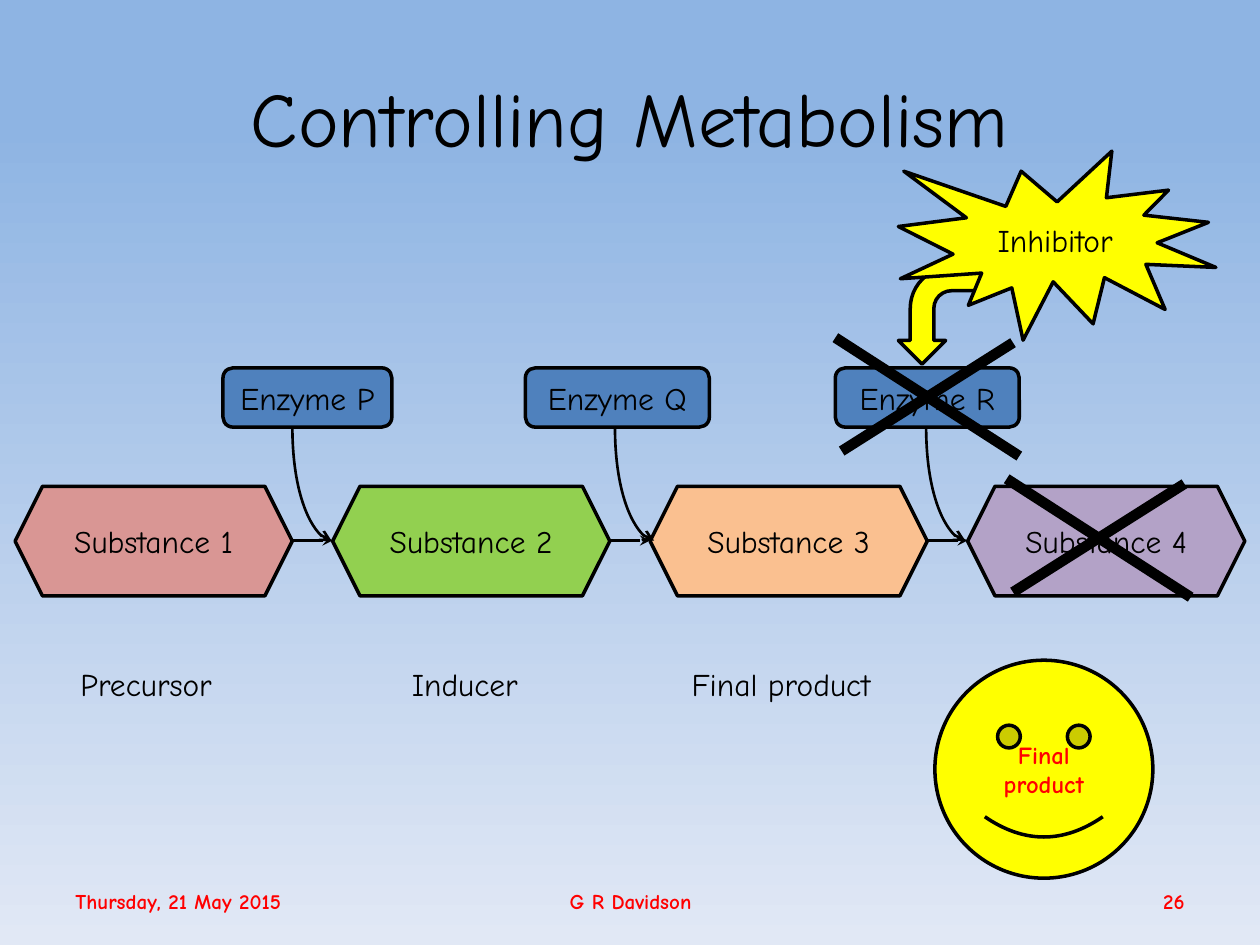
import pptx
import pptx.util
import pptx.dml.color
import pptx.enum.shapes
import pptx.enum.text
import pptx.oxml.ns
from lxml import etree

Inches = pptx.util.Inches
RGB = pptx.dml.color.RGBColor
SHAPE = pptx.enum.shapes.MSO_SHAPE
LINK = pptx.enum.shapes.MSO_CONNECTOR
ALIGN = pptx.enum.text.PP_ALIGN
ANCHOR = pptx.enum.text.MSO_ANCHOR
qn = pptx.oxml.ns.qn

FONT = "Comic Neue"
BLACK = RGB(0x00, 0x00, 0x00)
RED = RGB(0xFF, 0x00, 0x00)
YELLOW = RGB(0xFF, 0xFF, 0x00)
ENZYME_BLUE = RGB(0x4F, 0x81, 0xBD)
SKY_STOPS = [(0.13, RGB(0x8E, 0xB4, 0xE3)), (1, RGB(0xE1, 0xE8, 0xF5))]

# Content
TITLE = "Controlling Metabolism"
FOOTERS = [  # text, left, width, alignment
    ("Thursday, 21 May 2015", 0.5, 3.32, ALIGN.LEFT),
    ("G R Davidson", 3.42, 3.17, ALIGN.CENTER),
    ("26", 7.17, 2.33, ALIGN.RIGHT),
]
SUBSTANCES = [
    ("Substance 1", RGB(0xD9, 0x96, 0x94)),
    ("Substance 2", RGB(0x92, 0xD0, 0x50)),
    ("Substance 3", RGB(0xFA, 0xC0, 0x90)),
    ("Substance 4", RGB(0xB3, 0xA2, 0xC7)),
]
ENZYMES = [  # text, left, width, start of its curved arrow
    ("Enzyme P", 1.77, 1.34, 2.32),
    ("Enzyme Q", 4.17, 1.46, 4.88),
    ("Enzyme R", 6.63, 1.46, 7.35),
]
ROLES = [("Precursor", 0.54, 1.35), ("Inducer", 3.17, 1.14), ("Final product", 5.39, 1.75)]
CROSSES = [(6.63, 2.68), (7.99, 3.8)]

# Layout of the pathway
FIRST_LEFT, PITCH = 0.12, 2.52
HEX_W, HEX_H, HEX_TOP = 2.2, 0.87, 3.86
HEX_MID = 4.29
ENZYME_TOP, ENZYME_H = 2.92, 0.47
ENZYME_BASE = ENZYME_TOP + ENZYME_H
CURVE_W = 0.31

deck = pptx.Presentation()
deck.slide_width, deck.slide_height = Inches(10), Inches(7.5)
page = deck.slides.add_slide(deck.slide_layouts[6])


def write(box, text, size=18, color=BLACK, bold=False, align=ALIGN.CENTER, anchor=ANCHOR.MIDDLE, wrap=True):
    frame = box.text_frame
    frame.word_wrap = wrap
    frame.vertical_anchor = anchor
    para = frame.paragraphs[0]
    para.alignment = align
    span = para.add_run()
    span.text = text
    span.font.name = FONT
    span.font.size = pptx.util.Pt(size)
    span.font.bold = bold
    span.font.color.rgb = color


def add_label(text, left, top, width, height, **style):
    box = page.shapes.add_textbox(*map(Inches, (left, top, width, height)))
    write(box, text, **style)


def add_figure(kind, left, top, width, height, fill, text="", **style):
    figure = page.shapes.add_shape(kind, *map(Inches, (left, top, width, height)))
    figure.shadow.inherit = False
    figure.fill.solid()
    figure.fill.fore_color.rgb = fill
    figure.line.color.rgb = BLACK
    figure.line.width = pptx.util.Pt(2)
    if text:
        write(figure, text, **style)
    return figure


def add_line(x1, y1, x2, y2, width=1.5, head=None, kind=LINK.STRAIGHT):
    link = page.shapes.add_connector(kind, *map(Inches, (x1, y1, x2, y2)))
    link.line.color.rgb = BLACK
    link.line.width = pptx.util.Pt(width)
    props = link.element.spPr
    if head:
        etree.SubElement(props.find(qn("a:ln")), qn("a:tailEnd"), type=head)
    etree.SubElement(props, qn("a:effectLst"))
    return link


def add_curve(x, y1, y2):
    """Curve that leaves downwards and arrives from the left: a quarter-turned, flipped bend."""
    length = y2 - y1
    mid_x, mid_y = x + CURVE_W / 2, (y1 + y2) / 2
    curve = add_line(mid_x + length / 2, mid_y - CURVE_W / 2,
                     mid_x - length / 2, mid_y + CURVE_W / 2, head="arrow", kind=LINK.CURVE)
    props = curve.element.spPr
    props.find(qn("a:xfrm")).set("rot", str(270 * 60000))
    props.find(qn("a:prstGeom")).set("prst", "curvedConnector2")


# Background
sky = page.background.fill
sky.gradient()
sky.gradient_angle = 270
for stop, (position, color) in zip(sky.gradient_stops, SKY_STOPS):
    stop.position = position
    stop.color.rgb = color

# Title and footers
add_label(TITLE, 0.5, 0.3, 9, 1.25, size=44)
for text, left, width, align in FOOTERS:
    add_label(text, left, 6.95, width, 0.4, size=12, color=RED, bold=True, align=align)

# Substances and the arrows between them
for i, (text, fill) in enumerate(SUBSTANCES):
    left = FIRST_LEFT + i * PITCH
    add_figure(SHAPE.HEXAGON, left, HEX_TOP, HEX_W, HEX_H, fill, text)
    if i:
        add_line(left - PITCH + HEX_W, HEX_MID, left, HEX_MID, head="stealth")

# Enzymes acting on each step
for text, left, width, start in ENZYMES:
    add_curve(start, ENZYME_BASE, HEX_MID)
    add_figure(SHAPE.ROUNDED_RECTANGLE, left, ENZYME_TOP, width, ENZYME_H, ENZYME_BLUE, text)

# Roles below the substances
for text, left, width in ROLES:
    add_label(text, left, 5.23, width, 0.4, align=ALIGN.LEFT, anchor=ANCHOR.TOP, wrap=False)

# Crosses over what is blocked
for x, y in CROSSES:
    add_line(x, y, x + 1.46, y + 0.94, width=6)
    add_line(x + 1.41, y + 0.04, x + 0.05, y + 0.9, width=6)

# Inhibitor and its arrow
bend = add_figure(SHAPE.BENT_ARROW, 7.12, 2.13, 0.77, 0.75, YELLOW)
bend.rotation = 270
bend.element.spPr.find(qn("a:xfrm")).set("flipH", "1")
add_figure(SHAPE.EXPLOSION1, 7.13, 1.2, 2.52, 1.5, YELLOW, "Inhibitor")

# Final product
add_figure(SHAPE.SMILEY_FACE, 7.42, 5.24, 1.73, 1.73, YELLOW, "Final product",
           size=14, color=RED, bold=True)

deck.save("out.pptx")
